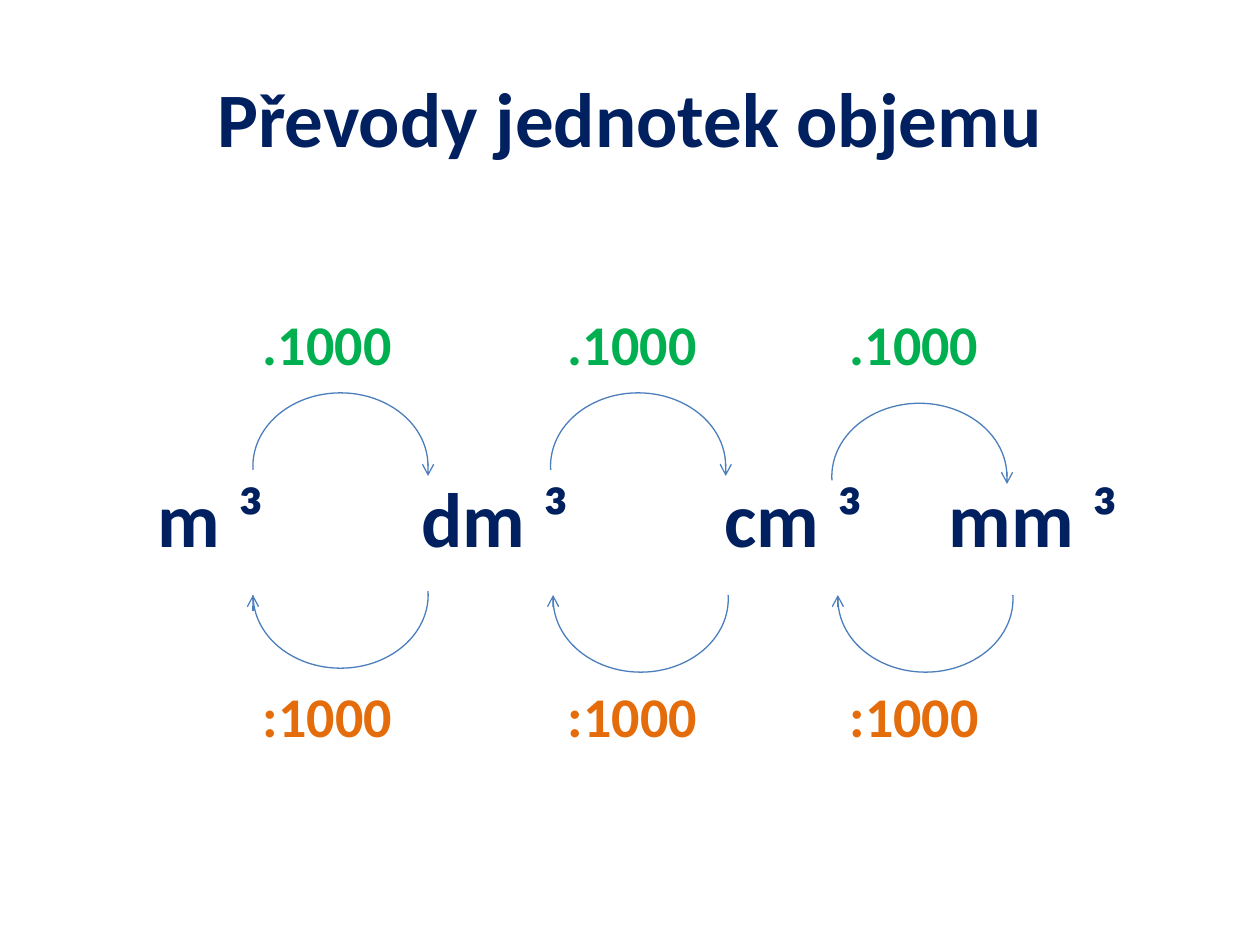
from lxml.etree import SubElement
from pptx import Presentation
from pptx.dml.color import RGBColor
from pptx.enum.shapes import MSO_CONNECTOR, MSO_SHAPE
from pptx.enum.text import MSO_ANCHOR, PP_ALIGN
from pptx.oxml.ns import qn
from pptx.util import Cm, Pt

NAVY = RGBColor(0x00, 0x20, 0x60)
GREEN = RGBColor(0x00, 0xB0, 0x50)
ORANGE = RGBColor(0xE4, 0x6C, 0x0A)
BLUE = RGBColor(0x4B, 0x7E, 0xBC)

TITLE = "Převody jednotek objemu"
UNITS = [("m ³", 3.17), ("dm ³", 8.5), ("cm ³", 14.6), ("mm ³", 19.12)]
FACTOR_LEFTS = [5.3, 11.45, 17.13]
FACTORS = [(".1000", 6.23, GREEN), (":1000", 13.73, ORANGE)]
UNIT_TOP = 9.47

ARC_WIDTH, ARC_HEIGHT = 3.53, 2.95
ARC_START = 106.44
MULTIPLY_ARCS = [(5.1, 7.92, 0.2), (11.1, 7.92, 0.2), (16.77, 8.13, 0.15)]
DIVIDE_ARCS = [(5.1, 10.52, 0.33), (11.15, 10.6, 0.08), (16.89, 10.6, 0.08)]

FRAME = {
    "word_wrap": True,
    "vertical_anchor": MSO_ANCHOR.MIDDLE,
    "margin_left": 0,
    "margin_right": 0,
    "margin_top": 0,
    "margin_bottom": 0,
}


def set_format(target, values):
    for name, value in values.items():
        setattr(target, name, value)


def add_label(slide, words, box, size, color, align=PP_ALIGN.LEFT):
    label = slide.shapes.add_textbox(*map(Cm, box))
    set_format(label.text_frame, FRAME)
    paragraph = label.text_frame.paragraphs[0]
    paragraph.alignment = align
    run = paragraph.add_run()
    run.text = words
    set_format(run.font, {"name": "Calibri", "size": Pt(size), "bold": True})
    run.font.color.rgb = color


def draw_line(outline):
    outline.color.rgb = BLUE
    outline.width = Pt(0.75)


def add_arc(slide, left, top, rotation):
    arc = slide.shapes.add_shape(
        MSO_SHAPE.ARC, Cm(left), Cm(top), Cm(ARC_WIDTH), Cm(ARC_HEIGHT))
    arc.adjustments[0] = ARC_START
    arc.adjustments[1] = 0
    arc.rotation = rotation
    arc.shadow.inherit = False
    arc.fill.background()
    draw_line(arc.line)


def add_arrow(slide, x, start, end):
    arrow = slide.shapes.add_connector(
        MSO_CONNECTOR.STRAIGHT, Cm(x), Cm(start), Cm(x), Cm(end))
    draw_line(arrow.line)
    SubElement(arrow.line._get_or_add_ln(), qn("a:tailEnd"), type="arrow")
    SubElement(arrow._element.spPr, qn("a:effectLst"))


def main():
    deck = Presentation()
    deck.slide_width, deck.slide_height = Cm(25.4), Cm(19.05)
    slide = deck.slides.add_slide(deck.slide_layouts[6])

    add_label(slide, TITLE, (1.27, 0.76, 22.86, 3.18), 44, NAVY, PP_ALIGN.CENTER)
    for unit, left in UNITS:
        add_label(slide, unit, (left, UNIT_TOP, 4, 1.9), 44, NAVY)
    for factor, top, color in FACTORS:
        for left in FACTOR_LEFTS:
            add_label(slide, factor, (left, top, 3, 1.38), 32, color)

    for left, top, length in MULTIPLY_ARCS:
        middle = top + ARC_HEIGHT / 2
        add_arc(slide, left, top, 0)
        add_arrow(slide, left + ARC_WIDTH, middle, middle + length)
    for left, top, length in DIVIDE_ARCS:
        tip = DIVIDE_ARCS[0][1] + ARC_HEIGHT / 2
        add_arc(slide, left, top, 180)
        add_arrow(slide, left, tip + length, tip)

    deck.save("out.pptx")


if __name__ == "__main__":
    main()
